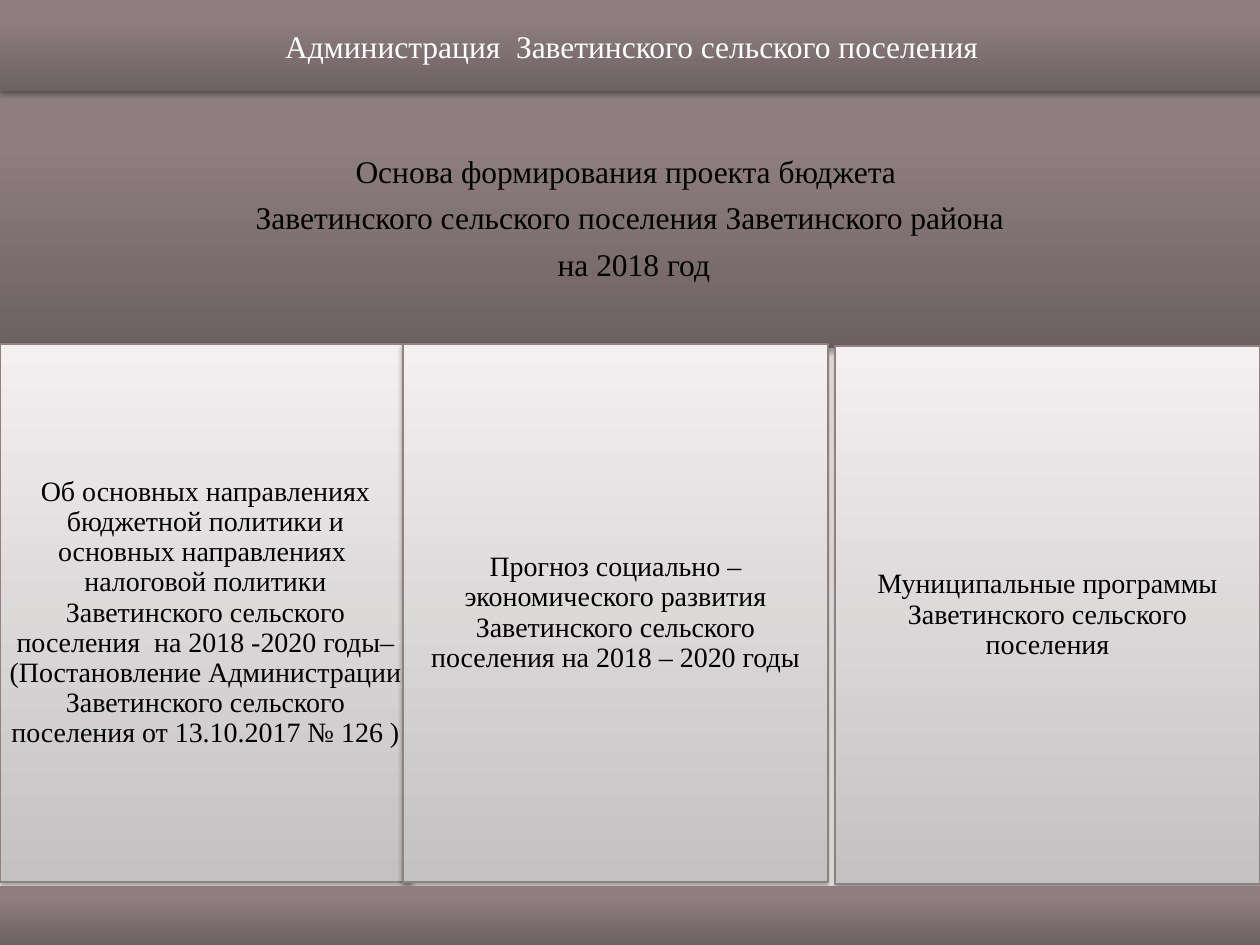
from lxml import etree
from pptx import Presentation
from pptx import util as u
from pptx.dml.color import RGBColor
from pptx.enum import shapes, text
from pptx.oxml import ns

PX = 914400 / 126
FONT = "Times New Roman"
BLACK = RGBColor(0x00, 0x00, 0x00)
WHITE = RGBColor(0xFF, 0xFF, 0xFF)
EDGE = RGBColor(0x8E, 0x81, 0x82)
BAND_STOPS = [
    (0, RGBColor(0x6E, 0x61, 0x62)),
    (80, RGBColor(0x8E, 0x7E, 0x7F)),
    (100, RGBColor(0x8F, 0x7E, 0x80)),
]
CARD_STOPS = [
    (0, RGBColor(0xC3, 0xC1, 0xC1)),
    (100, RGBColor(0xF4, 0xF0, 0xF1)),
]
HEADER = "Администрация  Заветинского сельского поселения"
BASIS = [
    "Основа формирования проекта бюджета ",
    "Заветинского сельского поселения Заветинского района",
    " на 2018 год",
]
CARDS = [
    ((0, 344, 411, 538),
     "Об основных направлениях бюджетной политики и основных направлениях  "
     "налоговой политики Заветинского сельского поселения  на 2018 -2020 годы– "
     "(Постановление Администрации Заветинского сельского поселения "
     "от 13.10.2017 № 126 )"),
    ((403, 344, 425, 538),
     "Прогноз социально – экономического развития Заветинского сельского "
     "поселения на 2018 – 2020 годы"),
    ((835, 346, 425, 538),
     "Муниципальные программы Заветинского сельского поселения"),
]


def px(n):
    return u.Emu(round(n * PX))


def add_child(parent, tag, **attrs):
    child = etree.SubElement(parent, ns.qn(tag))
    for name, value in attrs.items():
        child.set(name, str(value))
    return child


def set_gradient(sp, stops):
    sp.fill.gradient()
    sp.fill.gradient_angle = 90
    stop_list = sp._element.spPr.find(".//" + ns.qn("a:gsLst"))
    stop_list.clear()
    for position, color in stops:
        stop = add_child(stop_list, "a:gs", pos=position * 1000)
        add_child(stop, "a:srgbClr", val=color)


def set_shadow(sp, alpha, distance):
    sp.shadow.inherit = False
    effects = sp._element.spPr.find(ns.qn("a:effectLst"))
    shadow = add_child(effects, "a:outerShdw", blurRad=u.Pt(3.1),
                       dist=u.Pt(distance), dir=90 * 60000, rotWithShape=0)
    color = add_child(shadow, "a:srgbClr", val=BLACK)
    add_child(color, "a:alpha", val=alpha * 1000)


def set_text(sp, lines, size, color, spacing=0.9, after=7):
    tf = sp.text_frame
    tf.text = "\n".join(lines)
    tf.word_wrap = True
    tf.auto_size = text.MSO_AUTO_SIZE.NONE
    tf.vertical_anchor = text.MSO_ANCHOR.MIDDLE
    tf.margin_left = tf.margin_right = tf.margin_top = tf.margin_bottom = px(9)
    for p in tf.paragraphs:
        p.alignment = text.PP_ALIGN.CENTER
        p.line_spacing = spacing
        p.space_before = u.Pt(0)
        p.space_after = u.Pt(after)
        for r in p.runs:
            r.font.name = FONT
            r.font.size = u.Pt(size)
            r.font.color.rgb = color


def add_rect(s, box):
    return s.shapes.add_shape(shapes.MSO_SHAPE.RECTANGLE, *map(px, box))


def style_band(sp):
    set_gradient(sp, BAND_STOPS)
    sp.line.fill.background()
    set_shadow(sp, 35, 1.8)


def add_band(s, box):
    sp = add_rect(s, box)
    style_band(sp)
    return sp


def add_card(s, box, wording):
    sp = add_rect(s, box)
    set_gradient(sp, CARD_STOPS)
    sp.line.color.rgb = EDGE
    sp.line.width = u.Pt(0.75)
    set_shadow(sp, 38, 1.6)
    set_text(sp, [wording], 16, BLACK)


def add_header(s, box, wording):
    sp = s.shapes.title
    sp.left, sp.top, sp.width, sp.height = map(px, box)
    style_band(sp)
    set_text(sp, [wording], 18, WHITE, spacing=1.0, after=0)
    s.shapes._spTree.append(sp._element)


def main():
    prs = Presentation()
    prs.slide_width, prs.slide_height = px(1260), px(945)
    s = prs.slides.add_slide(prs.slide_layouts[5])
    set_text(add_band(s, (0, 91, 1260, 257)), BASIS, 18, BLACK)
    for box, wording in CARDS:
        add_card(s, box, wording)
    add_band(s, (0, 886, 1260, 59))
    add_header(s, (0, 0, 1264, 91), HEADER)
    prs.save("out.pptx")


if __name__ == "__main__":
    main()
